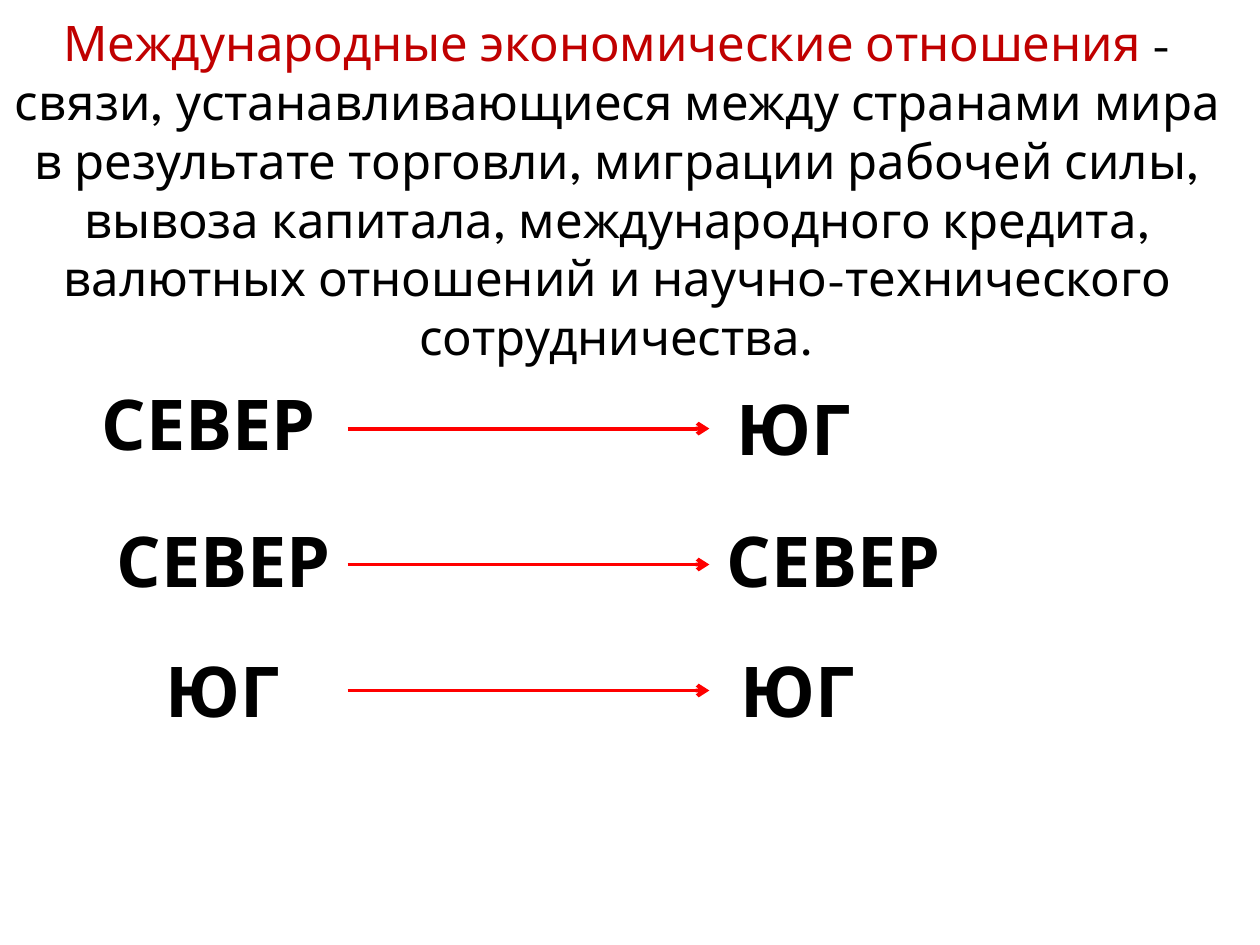
from lxml import etree
from pptx import Presentation
from pptx.dml.color import RGBColor
from pptx.enum import shapes, text
from pptx.oxml.ns import qn
from pptx.util import Cm, Pt

FONT = "League Spartan"
WHITE = RGBColor(0xFF, 0xFF, 0xFF)
BLACK = RGBColor(0, 0, 0)
DARK_RED = RGBColor(0xC0, 0, 0)
RED = RGBColor(0xFF, 0, 0)

DEFINITION = [
    ("Международные экономические отношения ", DARK_RED),
    ("- связи, устанавливающиеся между странами мира в результате торговли, "
     "миграции рабочей силы, вывоза капитала, международного кредита, "
     "валютных отношений и научно-технического сотрудничества.", BLACK),
]
# Each flow: (source, left, top), (target, left, top), arrow height; in cm
FLOWS = [
    (("СЕВЕР", 1.7, 7.54), ("ЮГ", 14.3, 7.65), 8.64),
    (("СЕВЕР", 2.01, 10.31), ("СЕВЕР", 14.3, 10.31), 11.38),
    (("ЮГ", 2.79, 12.93), ("ЮГ", 14.38, 12.93), 13.92),
]
LABEL_WIDTHS = {"СЕВЕР": 5, "ЮГ": 3.4}
LABEL_HEIGHT = 1.96
ARROW_START, ARROW_END = 7.01, 14.3


def add_text(s, runs, left, top, width, height, size, bold=False):
    """Add a centred text box of (text, colour) runs; lengths in cm."""
    sp = s.shapes.add_textbox(Cm(left), Cm(top), Cm(width), Cm(height))
    tf = sp.text_frame
    tf.word_wrap = True
    tf.auto_size = text.MSO_AUTO_SIZE.SHAPE_TO_FIT_TEXT
    p = tf.paragraphs[0]
    p.alignment = text.PP_ALIGN.CENTER
    p.font.name, p.font.size, p.font.bold = FONT, Pt(size), bold
    for words, color in runs:
        r = p.add_run()
        r.text = words
        r.font.name, r.font.size, r.font.bold = FONT, Pt(size), bold
        r.font.color.rgb = color


def add_arrow(s, y):
    c = s.shapes.add_connector(shapes.MSO_CONNECTOR.STRAIGHT,
                               Cm(ARROW_START), Cm(y), Cm(ARROW_END), Cm(y))
    c.line.color.rgb = RED
    c.line.width = Pt(2.25)
    etree.SubElement(c.line._get_or_add_ln(), qn("a:tailEnd"), type="arrow")
    etree.SubElement(c._element.spPr, qn("a:effectLst"))


def main():
    prs = Presentation()
    prs.slide_width, prs.slide_height = Cm(25.4), Cm(19.05)
    s = prs.slides.add_slide(prs.slide_layouts[6])

    panel = s.shapes.add_shape(shapes.MSO_SHAPE.ROUNDED_RECTANGLE,
                               Cm(0.25), Cm(0.28), Cm(24.89), Cm(18.52))
    panel.adjustments[0] = 0.017
    panel.shadow.inherit = False
    panel.fill.solid()
    panel.fill.fore_color.rgb = WHITE
    panel.line.fill.background()

    add_text(s, DEFINITION, 0, 0.13, 24.89, 7.44, 28)
    for source, target, arrow_y in FLOWS:
        for label, left, top in (source, target):
            add_text(s, [(label, BLACK)], left, top,
                     LABEL_WIDTHS[label], LABEL_HEIGHT, 40, bold=True)
        add_arrow(s, arrow_y)

    prs.save("out.pptx")


if __name__ == "__main__":
    main()
